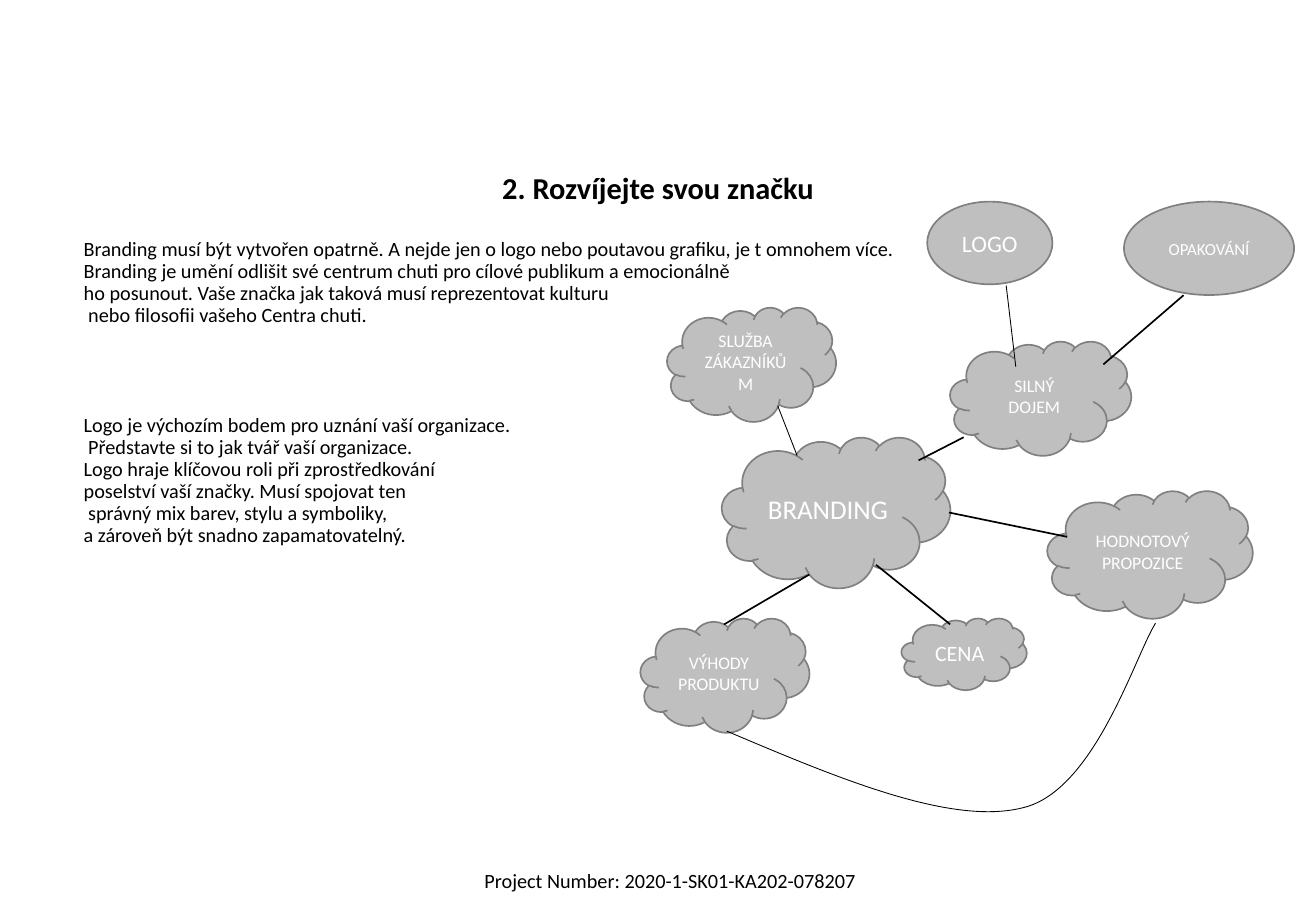
from dataclasses import dataclass

from lxml.etree import SubElement
from pptx import Presentation
from pptx.dml.color import RGBColor
from pptx.enum.shapes import MSO_CONNECTOR, MSO_SHAPE
from pptx.enum.text import MSO_ANCHOR, PP_ALIGN
from pptx.oxml.ns import qn
from pptx.util import Pt


@dataclass(frozen=True)
class Theme:
    font: str = "Calibri"
    ink: RGBColor = RGBColor(0, 0, 0)
    bubble: RGBColor = RGBColor(0xBF, 0xBF, 0xBF)
    outline: RGBColor = RGBColor(0x80, 0x80, 0x80)
    label: RGBColor = RGBColor(255, 255, 255)
    title: float = 18
    body: float = 12
    hub: float = 16
    logo: float = 14
    price: float = 13
    small: float = 10.5
    tiny: float = 10
    thin: float = 0.5
    thick: float = 1


THEME = Theme()
TITLE = "2. Rozvíjejte svou značku"
BRANDING_LINES = [
    "Branding musí být vytvořen opatrně. A nejde jen o logo nebo poutavou grafiku, je t omnohem více.",
    "Branding je umění odlišit své centrum chuti pro cílové publikum a emocionálně",
    "ho posunout. Vaše značka jak taková musí reprezentovat kulturu",
    " nebo filosofii vašeho Centra chuti.",
]
LOGO_LINES = [
    "Logo je výchozím bodem pro uznání vaší organizace.",
    " Představte si to jak tvář vaší organizace.",
    "Logo hraje klíčovou roli při zprostředkování",
    "poselství vaší značky. Musí spojovat ten",
    " správný mix barev, stylu a symboliky,",
    "a zároveň být snadno zapamatovatelný.",
]
# Positions below are relative to the mind map's top left corner.
CLOUD, OVAL = MSO_SHAPE.CLOUD, MSO_SHAPE.OVAL
BUBBLES = [
    ("BRANDING", CLOUD, THEME.hub, (48.2, 139.7, 135.4, 89.3)),
    ("SLUŽBA ZÁKAZNÍKŮM", CLOUD, THEME.small, (15.8, 62.7, 100.1, 67.7)),
    ("SILNÝ DOJEM", CLOUD, THEME.small, (183.5, 82.8, 107.3, 67.7)),
    ("CENA", CLOUD, THEME.price, (154.7, 247, 74.2, 42.5)),
    ("VÝHODY PRODUKTU", CLOUD, THEME.small, (0, 247, 100.1, 67.7)),
    ("HODNOTOVÝ PROPOZICE", CLOUD, THEME.small, (241.1, 171.4, 121.7, 75.6)),
    ("LOGO", OVAL, THEME.logo, (169.9, 0, 74.2, 49)),
    ("OPAKOVÁNÍ", OVAL, THEME.tiny, (286.5, 0, 100.8, 55.4)),
]
LINKS = [
    (THEME.thin, (81.3, 121), (92.8, 150.5)),
    (THEME.thin, (216.7, 49.7), (222.4, 97.9)),
    (THEME.thick, (321.8, 55.5), (274.3, 96.5)),
    (THEME.thick, (100, 221.1), (49.6, 250.6)),
    (THEME.thick, (139.6, 215.3), (183.5, 250.6)),
    (THEME.thick, (182.8, 184.3), (252.7, 198.7)),
    (THEME.thick, (191.5, 139.7), (164.8, 153.4)),
]
CURVE = [(51.1, 313.9), (117.3, 342), (184.3, 370.1), (226.7, 359.3),
         (269.2, 349.2), (293, 269.3), (305.2, 249.9)]


def apply_format(target, values):
    for name, value in values.items():
        setattr(target, name, value)


def write_para(para, text, size, color, para_format=None, bold=False):
    apply_format(para, para_format or {})
    span = para.add_run()
    span.text = text
    apply_format(span.font, {"name": THEME.font, "size": Pt(size), "bold": bold})
    span.font.color.rgb = color


def draw_line(line, color, width):
    line.color.rgb = color
    line.width = Pt(width)


def add_text_frame(page, box, wrap):
    frame = page.shapes.add_textbox(*map(Pt, box)).text_frame
    frame.word_wrap = wrap
    return frame


def add_content(page, box):
    frame = add_text_frame(page, box, True)
    tight = {"line_spacing": 0.9}
    write_para(frame.paragraphs[0], TITLE, THEME.title, THEME.ink,
               {**tight, "alignment": PP_ALIGN.CENTER}, True)
    for gap, lines in ((19.5, BRANDING_LINES), (52.5, LOGO_LINES)):
        for index, text in enumerate(lines):
            space = {"space_before": Pt(0 if index else gap)}
            write_para(frame.add_paragraph(), text, THEME.body, THEME.ink, {**tight, **space})


def add_footer(page, box):
    frame = add_text_frame(page, box, False)
    write_para(frame.paragraphs[0], "Project Number: 2020-1-SK01-KA202-078207",
               THEME.body, THEME.ink, {"alignment": PP_ALIGN.CENTER})


def add_bubble(page, text, kind, size, box):
    bubble = page.shapes.add_shape(kind, *map(Pt, box))
    bubble.shadow.inherit = False
    bubble.fill.solid()
    bubble.fill.fore_color.rgb = THEME.bubble
    draw_line(bubble.line, THEME.outline, THEME.thick)
    apply_format(bubble.text_frame, {"word_wrap": True, "vertical_anchor": MSO_ANCHOR.MIDDLE})
    write_para(bubble.text_frame.paragraphs[0], text, size, THEME.label,
               {"alignment": PP_ALIGN.CENTER})


def add_link(page, width, start, end):
    link = page.shapes.add_connector(MSO_CONNECTOR.STRAIGHT, *map(Pt, (*start, *end)))
    draw_line(link.line, THEME.ink, width)
    SubElement(link._element.spPr, qn("a:effectLst"))


def add_curve(page, points):
    """Draw cubic Bézier pieces; each takes three points after the start."""
    start, *rest = [(Pt(x), Pt(y)) for x, y in points]
    builder = page.shapes.build_freeform(*start)
    builder.add_line_segments(rest, close=False)
    curve = builder.convert_to_shape()
    curve.shadow.inherit = False
    curve.fill.background()
    draw_line(curve.line, THEME.ink, THEME.thin)
    outline = next(curve._element.iter(qn("a:path")))
    steps = outline.findall(qn("a:lnTo"))
    for first in range(0, len(steps), 3):
        piece = SubElement(outline, qn("a:cubicBezTo"))
        for step in steps[first:first + 3]:
            piece.append(step[0])
            outline.remove(step)


def add_mind_map(page, left, top):
    def place(point):
        return left + point[0], top + point[1]

    for text, kind, size, box in BUBBLES:
        add_bubble(page, text, kind, size, (*place(box), *box[2:]))
    for width, start, end in LINKS:
        add_link(page, width, place(start), place(end))
    add_curve(page, [place(point) for point in CURVE])


def main():
    deck = Presentation()
    apply_format(deck, {"slide_width": Pt(779.76), "slide_height": Pt(540)})
    page = deck.slides.add_slide(deck.slide_layouts[6])
    add_footer(page, (269.3, 511.2, 255.6, 21.6))
    add_content(page, (42.5, 99.4, 694.8, 382.3))
    add_mind_map(page, 379.5, 119.5)
    deck.save("out.pptx")


if __name__ == "__main__":
    main()
